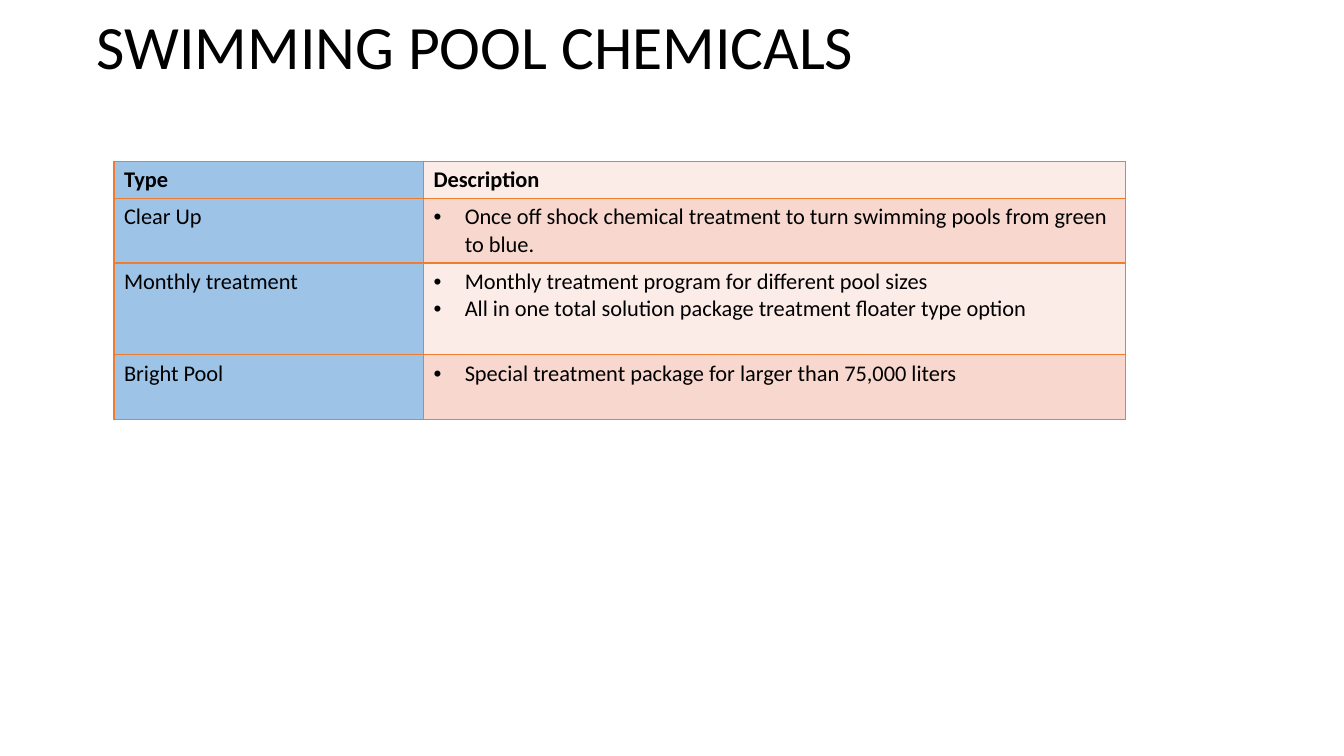
from lxml.etree import SubElement
from pptx import Presentation
from pptx.dml.color import RGBColor
from pptx.enum.text import MSO_ANCHOR
from pptx.oxml import parse_xml
from pptx.oxml.ns import nsdecls, qn
from pptx.util import Pt

PX = 9144
BLACK = RGBColor(0x00, 0x00, 0x00)
BLUE = RGBColor(0x9D, 0xC3, 0xE6)
LIGHT_PINK = RGBColor(0xFC, 0xEC, 0xE8)
DARK_PINK = RGBColor(0xF8, 0xD7, 0xCE)
ORANGE = RGBColor(0xED, 0x7D, 0x31)

COLUMN_WIDTHS = [307, 696]
ROW_HEIGHTS = [37, 64, 91, 64]
BULLET_INDENT = 31
TREATMENTS = [
    ("Type", ["Description"]),
    ("Clear Up", ["Once off shock chemical treatment to turn swimming pools from green to blue."]),
    ("Monthly treatment", [
        "Monthly treatment program for different pool sizes",
        "All in one total solution package treatment floater type option",
    ]),
    ("Bright Pool", ["Special treatment package for larger than 75,000 liters"]),
]


def set_font(paragraph, size, bold=False):
    font = paragraph.font
    for name, value in {"name": "Calibri", "size": Pt(size), "bold": bold}.items():
        setattr(font, name, value)
    font.color.rgb = BLACK


def add_bullet(paragraph):
    properties = paragraph._p.get_or_add_pPr()
    properties.set("marL", str(BULLET_INDENT * PX))
    properties.set("indent", str(-BULLET_INDENT * PX))
    SubElement(properties, qn("a:buFont"), typeface="Arial")
    SubElement(properties, qn("a:buChar"), char="•")


def add_borders(cell):
    properties = cell._tc.get_or_add_tcPr()
    for position, side in enumerate("LRTB"):
        properties.insert(position, parse_xml(
            f'<a:ln{side} {nsdecls("a")} w="{Pt(1)}"><a:solidFill>'
            f'<a:srgbClr val="{ORANGE}"/></a:solidFill></a:ln{side}>'))


def fill_cell(cell, lines, color, bold=False, bulleted=False):
    cell.fill.solid()
    cell.fill.fore_color.rgb = color
    add_borders(cell)
    cell.text = "\n".join(lines)
    for paragraph in cell.text_frame.paragraphs:
        if bulleted:
            add_bullet(paragraph)
        set_font(paragraph, 16, bold)


def add_title(slide, left, top, width, height):
    shape = slide.shapes.add_textbox(left * PX, top * PX, width * PX, height * PX)
    frame = shape.text_frame
    for name, value in {"word_wrap": True, "vertical_anchor": MSO_ANCHOR.MIDDLE}.items():
        setattr(frame, name, value)
    paragraph = frame.paragraphs[0]
    paragraph.text = "SWIMMING POOL CHEMICALS"
    paragraph.line_spacing = 0.9
    set_font(paragraph, 44)


def add_treatment_table(slide, left, top):
    shape = slide.shapes.add_table(
        len(ROW_HEIGHTS), len(COLUMN_WIDTHS), left * PX, top * PX,
        sum(COLUMN_WIDTHS) * PX, sum(ROW_HEIGHTS) * PX)
    table = shape.table
    for column, width in zip(table.columns, COLUMN_WIDTHS):
        column.width = width * PX
    for index, (kind, descriptions) in enumerate(TREATMENTS):
        table.rows[index].height = ROW_HEIGHTS[index] * PX
        header = index == 0
        band = DARK_PINK if index % 2 else LIGHT_PINK
        fill_cell(table.cell(index, 0), [kind], BLUE, header)
        fill_cell(table.cell(index, 1), descriptions, band, header, not header)


def main():
    presentation = Presentation()
    presentation.slide_width = 1333 * PX
    presentation.slide_height = 750 * PX
    slide = presentation.slides.add_slide(presentation.slide_layouts[6])
    add_title(slide, 86, 0, 1150, 98)
    add_treatment_table(slide, 113, 160)
    presentation.save("out.pptx")


if __name__ == "__main__":
    main()
